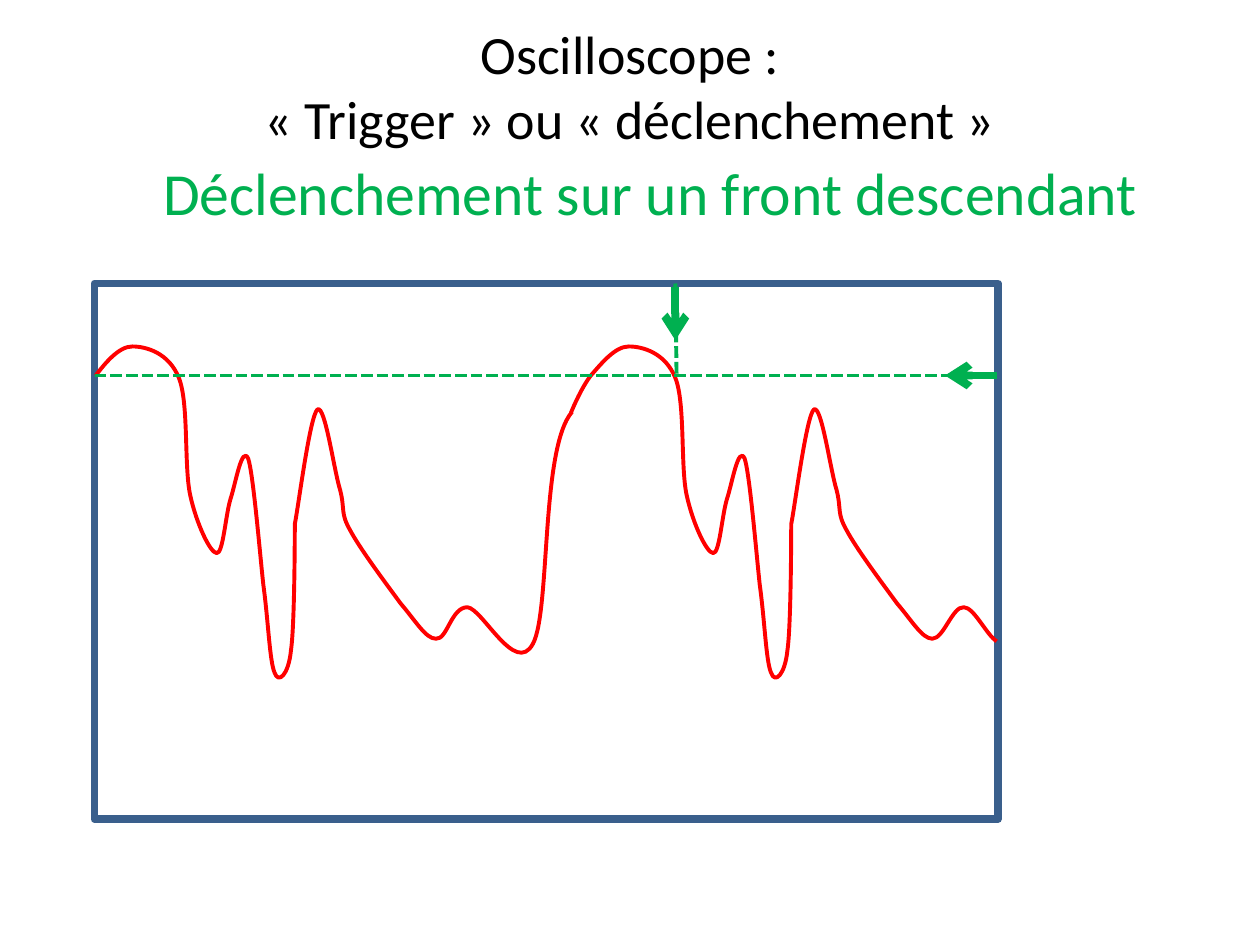
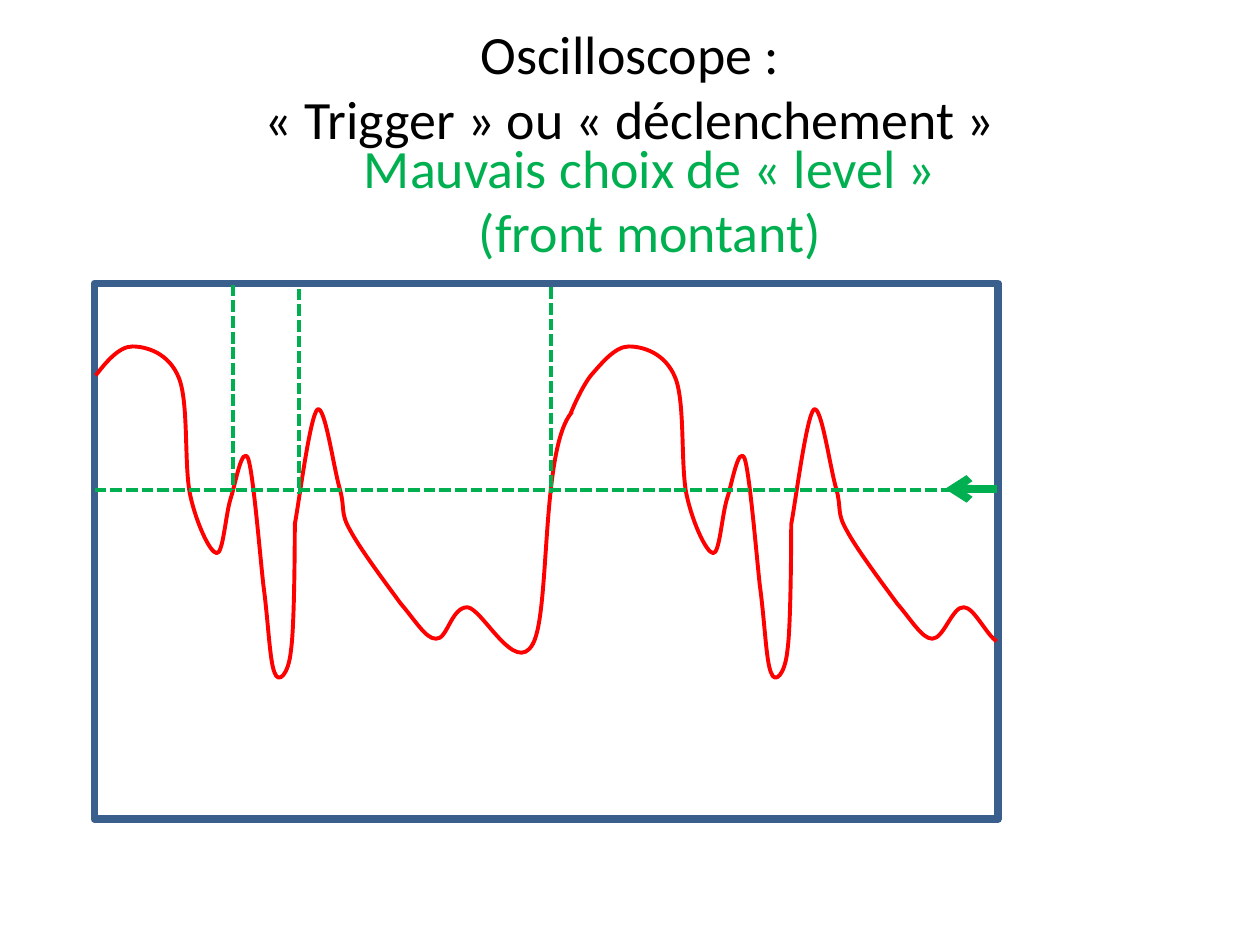
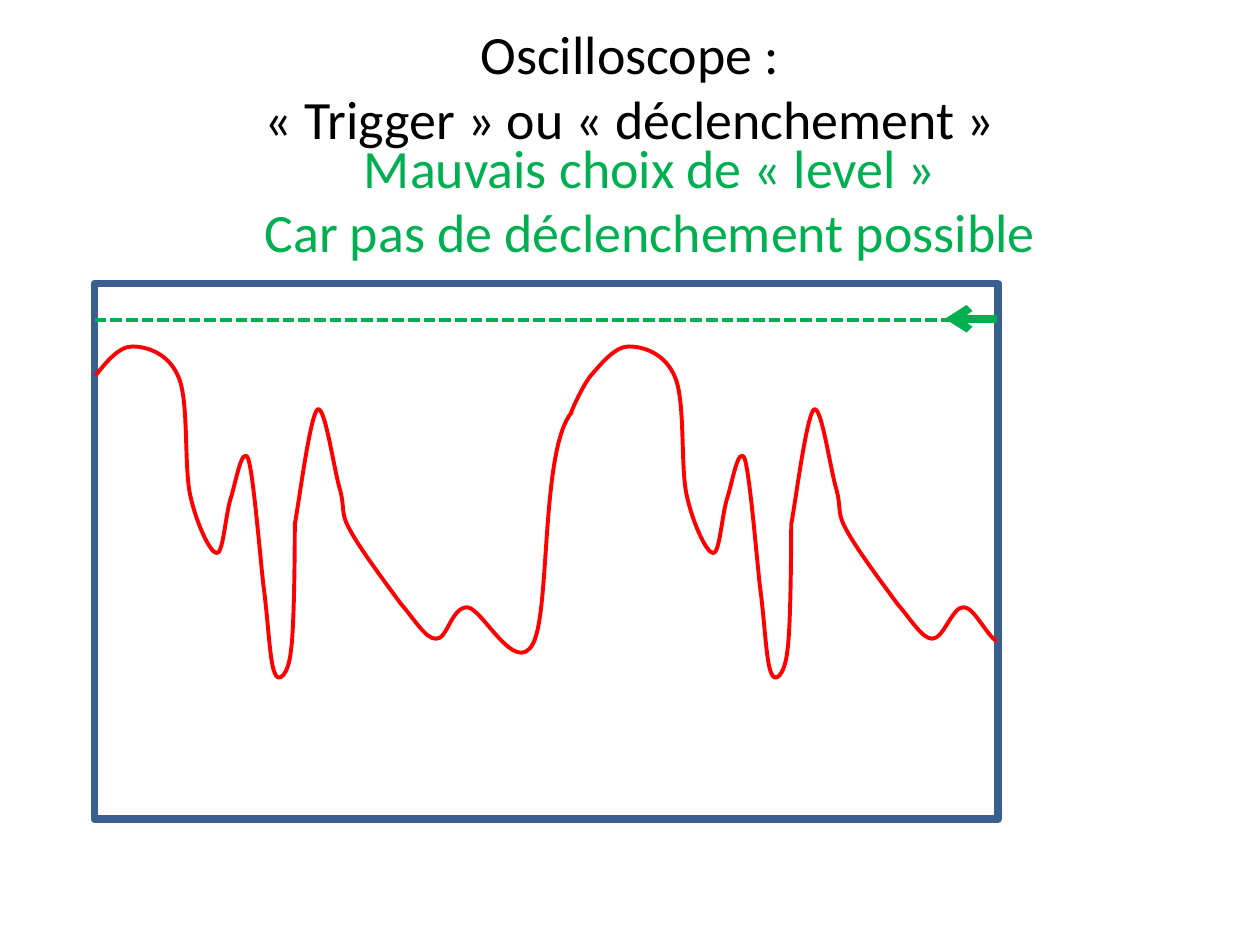
from dataclasses import dataclass

from lxml.etree import SubElement
from pptx import Presentation
from pptx.dml.color import RGBColor
from pptx.enum.dml import MSO_LINE
from pptx.enum.shapes import MSO_CONNECTOR, MSO_SHAPE
from pptx.enum.text import MSO_ANCHOR, MSO_AUTO_SIZE, PP_ALIGN
from pptx.oxml.ns import qn
from pptx.util import Inches, Pt

Point = tuple[float, float]
Bezier = tuple[Point, Point, Point]

FONT = "Calibri"
BLACK, GREEN, RED, BLUE = "000000", "00B050", "FF0000", "3A5F8C"
THIN, THICK = 2.25, 4.5
TITLE = "Oscilloscope :\n« Trigger » ou « déclenchement »"
TITLE_SIZE = 30.8
TEXT_WIDTH, TEXT_HEIGHT = 8.5, 0.94

SCREEN_LEFT, SCREEN_TOP, SCREEN_WIDTH, SCREEN_HEIGHT = 0.75, 2.25, 7.17, 4.25
SIGNAL_RIGHT = 7.91
SIGNAL_HEIGHT = 2.63
ARROW_LENGTH = 0.41
PERIOD = 3.94

# The part of the signal that both periods show, as Bezier segments
SIGNAL_START: Point = (0.76, 2.98)
SIGNAL: list[Bezier] = [
    ((0.83, 2.89), (0.94, 2.75), (1.05, 2.75)),
    ((1.16, 2.75), (1.34, 2.8), (1.42, 3)),
    ((1.5, 3.2), (1.46, 3.7), (1.51, 3.93)),
    ((1.56, 4.16), (1.67, 4.39), (1.72, 4.39)),
    ((1.77, 4.4), (1.79, 4.09), (1.83, 3.96)),
    ((1.87, 3.84), (1.92, 3.53), (1.97, 3.64)),
    ((2.01, 3.76), (2.06, 4.36), (2.09, 4.64)),
    ((2.13, 4.93), (2.14, 5.25), (2.18, 5.34)),
    ((2.21, 5.43), (2.29, 5.36), (2.31, 5.16)),
    ((2.34, 4.96), (2.34, 4.16), (2.34, 4.16)),
    ((2.37, 4.01), (2.46, 3.3), (2.52, 3.25)),
    ((2.58, 3.21), (2.65, 3.73), (2.7, 3.89)),
    ((2.74, 4.05), (2.7, 4.07), (2.78, 4.21)),
    ((2.86, 4.36), (3.07, 4.64), (3.18, 4.79)),
    ((3.3, 4.93), (3.38, 5.07), (3.46, 5.07)),
]
FIRST_END: list[Bezier] = [
    ((3.55, 5.08), (3.58, 4.82), (3.71, 4.82)),
    ((3.83, 4.83), (4.09, 5.37), (4.23, 5.11)),
    ((4.37, 4.85), (4.29, 3.56), (4.54, 3.27)),
]
SECOND_START: Point = (4.53, 3.28)
SECOND_RISE: Bezier = ((4.55, 3.23), (4.62, 3.07), (4.69, 2.98))
SECOND_END: list[Bezier] = [
    ((7.49, 5.07), (7.56, 4.81), (7.65, 4.82)),
    ((7.73, 4.82), (7.83, 5.04), (7.91, 5.09)),
]


@dataclass(frozen=True)
class Segment:
    start: Point
    end: Point
    is_arrow: bool = False


@dataclass(frozen=True)
class TriggerSlide:
    caption: str
    caption_size: float
    caption_top: float
    level: float
    arrow_level: float
    markers: tuple[Segment, ...] = ()


SLIDES = [
    TriggerSlide(
        "Déclenchement sur un front descendant", 34.1, 1.05, 2.98, 2.98,
        (Segment((5.36, 2.25), (5.37, 2.98)),
         Segment((5.36, 2.28), (5.36, 2.7), is_arrow=True)),
    ),
    TriggerSlide(
        "Mauvais choix de « level »\n(front montant)", TITLE_SIZE, 1.11, 3.89, 3.88,
        (Segment((1.85, 2.26), (1.85, 3.89)),
         Segment((2.37, 2.29), (2.37, 3.92)),
         Segment((4.37, 2.28), (4.37, 3.91))),
    ),
    TriggerSlide(
        "Mauvais choix de « level »\nCar pas de déclenchement possible",
        TITLE_SIZE, 1.11, 2.54, 2.53,
    ),
]


def color(value: str) -> RGBColor:
    return RGBColor.from_string(value)


def set_line(item, line_color: str, width: float) -> None:
    item.line.color.rgb = color(line_color)
    item.line.width = Pt(width)


def set_outline(shape, line_color: str, width: float) -> None:
    shape.shadow.inherit = False
    shape.fill.background()
    set_line(shape, line_color, width)


def write_text(shape, text: str, left: float, top: float, size: float, text_color: str) -> None:
    shape.left, shape.top = Inches(left), Inches(top)
    shape.width, shape.height = Inches(TEXT_WIDTH), Inches(TEXT_HEIGHT)
    text_frame = shape.text_frame
    text_frame.text = text
    text_frame.word_wrap = True
    text_frame.auto_size = MSO_AUTO_SIZE.NONE
    text_frame.vertical_anchor = MSO_ANCHOR.MIDDLE
    for paragraph in text_frame.paragraphs:
        paragraph.alignment = PP_ALIGN.CENTER
        for run in paragraph.runs:
            run.font.name = FONT
            run.font.size = Pt(size)
            run.font.color.rgb = color(text_color)


def shift(curve: Bezier) -> Bezier:
    """Move a segment one period to the right."""
    first, second, end = ((x + PERIOD, y) for x, y in curve)
    return first, second, end


def draw_curve(slide, start: Point, curves: list[Bezier]) -> None:
    """Build a freeform through the segment ends, then bend its lines into Beziers."""
    builder = slide.shapes.build_freeform(Inches(start[0]), Inches(start[1]))
    ends = [(Inches(x), Inches(y)) for _, _, (x, y) in curves]
    builder.add_line_segments(ends, close=False)
    shape = builder.convert_to_shape()
    shape.height = Inches(SIGNAL_HEIGHT)
    outline = shape._element.find(".//" + qn("a:path"))
    outline.set("h", str(shape.height))
    for line, curve in zip(outline.findall(qn("a:lnTo")), curves):
        outline.remove(line)
        bezier = SubElement(outline, qn("a:cubicBezTo"))
        for x, y in curve:
            SubElement(bezier, qn("a:pt"), x=str(Inches(x) - shape.left), y=str(Inches(y) - shape.top))
    set_outline(shape, RED, THIN)


def draw_segment(slide, segment: Segment) -> None:
    ends = [Inches(value) for value in (*segment.start, *segment.end)]
    connector = slide.shapes.add_connector(MSO_CONNECTOR.STRAIGHT, *ends)
    set_line(connector, GREEN, THICK if segment.is_arrow else THIN)
    if segment.is_arrow:
        SubElement(connector.line._get_or_add_ln(), qn("a:tailEnd"), type="arrow")
    else:
        connector.line.dash_style = MSO_LINE.SQUARE_DOT
    SubElement(connector._element.spPr, qn("a:effectLst"))


def draw_screen(slide) -> None:
    screen = slide.shapes.add_shape(
        MSO_SHAPE.RECTANGLE, Inches(SCREEN_LEFT), Inches(SCREEN_TOP),
        Inches(SCREEN_WIDTH), Inches(SCREEN_HEIGHT),
    )
    set_outline(screen, BLUE, THICK)
    draw_curve(slide, SIGNAL_START, SIGNAL + FIRST_END)
    second_period = [SECOND_RISE, *map(shift, SIGNAL), *SECOND_END]
    draw_curve(slide, SECOND_START, second_period)


def add_trigger_slide(presentation, content: TriggerSlide) -> None:
    slide = presentation.slides.add_slide(presentation.slide_layouts.get_by_name("Title Only"))
    write_text(slide.shapes.title, TITLE, 0.75, 0.21, TITLE_SIZE, BLACK)
    draw_screen(slide)
    caption = slide.shapes.add_textbox(0, 0, 0, 0)
    write_text(caption, content.caption, 0.91, content.caption_top, content.caption_size, GREEN)
    level = Segment((SCREEN_LEFT, content.level), (SIGNAL_RIGHT, content.level))
    level_arrow = Segment(
        (SIGNAL_RIGHT, content.arrow_level),
        (SIGNAL_RIGHT - ARROW_LENGTH, content.arrow_level),
        is_arrow=True,
    )
    for segment in (level, *content.markers, level_arrow):
        draw_segment(slide, segment)


def main() -> None:
    presentation = Presentation()
    presentation.slide_width, presentation.slide_height = Inches(10), Inches(7.5)
    for content in SLIDES:
        add_trigger_slide(presentation, content)
    presentation.save("out.pptx")


if __name__ == "__main__":
    main()
